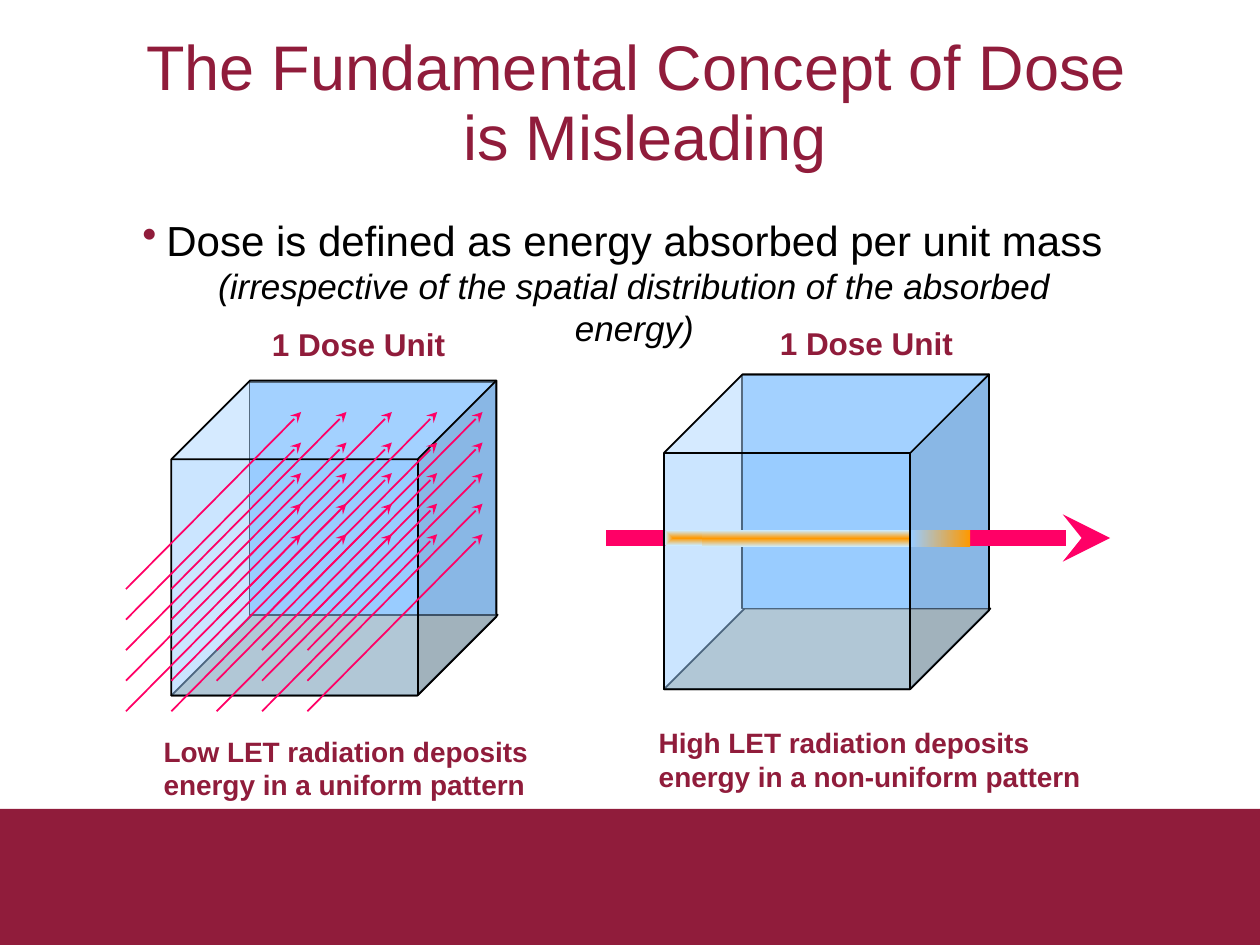
from lxml.etree import SubElement
from pptx import Presentation
from pptx.dml.color import RGBColor
from pptx.enum.shapes import MSO_CONNECTOR as Connector, MSO_SHAPE as Shape
from pptx.enum.text import MSO_ANCHOR as Anchor, PP_ALIGN as Align
from pptx.oxml import parse_xml
from pptx.oxml.ns import nsdecls, qn
from pptx.util import Inches, Pt

MAROON = RGBColor(0x90, 0x1C, 0x3B)
BLACK = RGBColor(0x00, 0x00, 0x00)
SAND = RGBColor(0xCA, 0xC2, 0xAD)
SKY = RGBColor(0x99, 0xCC, 0xFF)
PALE = RGBColor(0xCC, 0xEC, 0xFF)
ORANGE = RGBColor(0xFF, 0x99, 0x00)
PINK = RGBColor(0xFF, 0x00, 0x66)

VERTICAL = '<a:lin ang="5400000" scaled="0"/>'
HORIZONTAL = '<a:lin ang="0" scaled="0"/>'
FROM_CENTRE = ('<a:path path="rect"><a:fillToRect l="50000" t="50000" '
               'r="50000" b="50000"/></a:path>')


def add_box(slide, left, top, width, height, wrap=True):
    box = slide.shapes.add_textbox(Inches(left), Inches(top), Inches(width), Inches(height))
    box.text_frame.word_wrap = wrap
    return box.text_frame


def add_span(para, text, size, color, bold=False, italic=False):
    span = para.add_run()
    span.text = text
    font = span.font
    font.name, font.size, font.bold, font.italic = "Arial", Pt(size), bold, italic
    font.color.rgb = color


def add_title(slide):
    frame = add_box(slide, 0.87, 0.21, 8.5, 1.21)
    frame.vertical_anchor = Anchor.BOTTOM
    para = frame.paragraphs[0]
    para.alignment = Align.CENTER
    para.line_spacing = Pt(40)
    add_span(para, "The Fundamental Concept of Dose ", 36, MAROON)
    para.add_line_break()
    add_span(para, "is Misleading", 36, MAROON)


def add_definition(slide):
    para = add_box(slide, 0.94, 1.65, 8, 0.83).paragraphs[0]
    para.alignment = Align.CENTER
    props = para._p.get_or_add_pPr()
    props.set("marL", str(Inches(0.19)))
    props.set("indent", str(-Inches(0.19)))
    bullet_color = SubElement(props, qn("a:buClr"))
    SubElement(bullet_color, qn("a:srgbClr"), val=str(MAROON))
    SubElement(props, qn("a:buChar"), char="•")
    add_span(para, "Dose is defined as energy absorbed per unit mass ", 24, BLACK)
    add_span(para, "(irrespective of the spatial distribution of the absorbed energy)",
             20, BLACK, italic=True)


def add_label(slide, left, top, width, height, lines, size):
    frame = add_box(slide, left, top, width, height, wrap=False)
    for index, line in enumerate(lines):
        para = frame.add_paragraph() if index else frame.paragraphs[0]
        add_span(para, line, size, MAROON, bold=True)


def add_solid(slide, kind, left, top, width, height, color, outlined=True, adjust=None):
    shape = slide.shapes.add_shape(kind, Inches(left), Inches(top), Inches(width), Inches(height))
    shape.shadow.inherit = False
    shape.fill.solid()
    shape.fill.fore_color.rgb = color
    if outlined:
        shape.line.color.rgb = BLACK
        shape.line.width = Pt(1)
    else:
        shape.line.fill.background()
    if adjust is not None:
        shape.adjustments[0] = adjust
    return shape


def add_gradient(slide, left, top, width, height, colors, direction):
    shape = add_solid(slide, Shape.RECTANGLE, left, top, width, height, colors[0], False)
    step = 100000 // (len(colors) - 1)
    stops = "".join(f'<a:gs pos="{index * step}"><a:srgbClr val="{color}"/></a:gs>'
                    for index, color in enumerate(colors))
    gradient = parse_xml(f'<a:gradFill {nsdecls("a")} rotWithShape="1">'
                         f'<a:gsLst>{stops}</a:gsLst>{direction}</a:gradFill>')
    props = shape._element.spPr
    props.replace(props.find(qn("a:solidFill")), gradient)


def add_line(slide, start, end, color, width=1, arrow=False):
    line = slide.shapes.add_connector(Connector.STRAIGHT, *map(Inches, start + end))
    line.line.color.rgb = color
    line.line.width = Pt(width)
    if arrow:
        SubElement(line.line._get_or_add_ln(), qn("a:headEnd"), type="stealth")
    SubElement(line._element.spPr, qn("a:effectLst"))


def add_glass_cube(slide, left, top):
    add_solid(slide, Shape.PARALLELOGRAM, left, top + 1.86, 2.59, 0.64, SAND, adjust=1.0)
    add_solid(slide, Shape.RECTANGLE, left + 0.62, top + 0.01, 1.96, 1.85, SKY)
    cube = add_solid(slide, Shape.CUBE, left, top, 2.58, 2.5, SKY, adjust=0.25)
    color = cube._element.spPr.find(qn("a:solidFill"))[0]
    SubElement(color, qn("a:alpha"), val="50000")


def add_uniform_rays(slide):
    for row in range(5):
        for column in range(5):
            x, y = 2.39 + 0.36 * column, 3.27 + 0.2425 * row
            add_line(slide, (x, y), (x - 1.39, y + 1.405), PINK, arrow=True)


def add_single_track(slide):
    add_line(slide, (8.81, 4.27), (4.81, 4.27), PINK, 9, arrow=True)
    add_gradient(slide, 5.28, 4.21, 0.69, 0.12, [ORANGE, PALE], FROM_CENTRE)
    add_line(slide, (5.27, 4.06), (5.27, 4.41), BLACK)
    add_gradient(slide, 5.57, 4.21, 1.89, 0.13, [PALE, ORANGE, PALE], VERTICAL)
    add_gradient(slide, 7.23, 4.21, 0.47, 0.13, [SKY, ORANGE], HORIZONTAL)
    add_line(slide, (7.22, 4.14), (7.22, 4.5), BLACK)


def main():
    deck = Presentation()
    deck.slide_width, deck.slide_height = Inches(10), Inches(7.5)
    slide = deck.slides.add_slide(deck.slide_layouts[6])
    add_solid(slide, Shape.RECTANGLE, 0, 6.42, 10, 1.08, MAROON, outlined=False)
    add_title(slide)
    add_definition(slide)

    add_label(slide, 1.2, 5.78, 3.13, 0.64,
              ["Low LET radiation deposits", "energy in a uniform pattern"], 16)
    add_glass_cube(slide, 1.36, 3.02)
    add_uniform_rays(slide)
    add_label(slide, 2.06, 2.53, 1.59, 0.4, ["1 Dose Unit"], 18)

    add_label(slide, 5.13, 5.71, 3.6, 0.64,
              ["High LET radiation deposits", "energy in a non-uniform pattern"], 16)
    add_glass_cube(slide, 5.27, 2.97)
    add_label(slide, 6.09, 2.52, 1.59, 0.4, ["1 Dose Unit"], 18)
    add_single_track(slide)
    deck.save("out.pptx")


if __name__ == "__main__":
    main()
